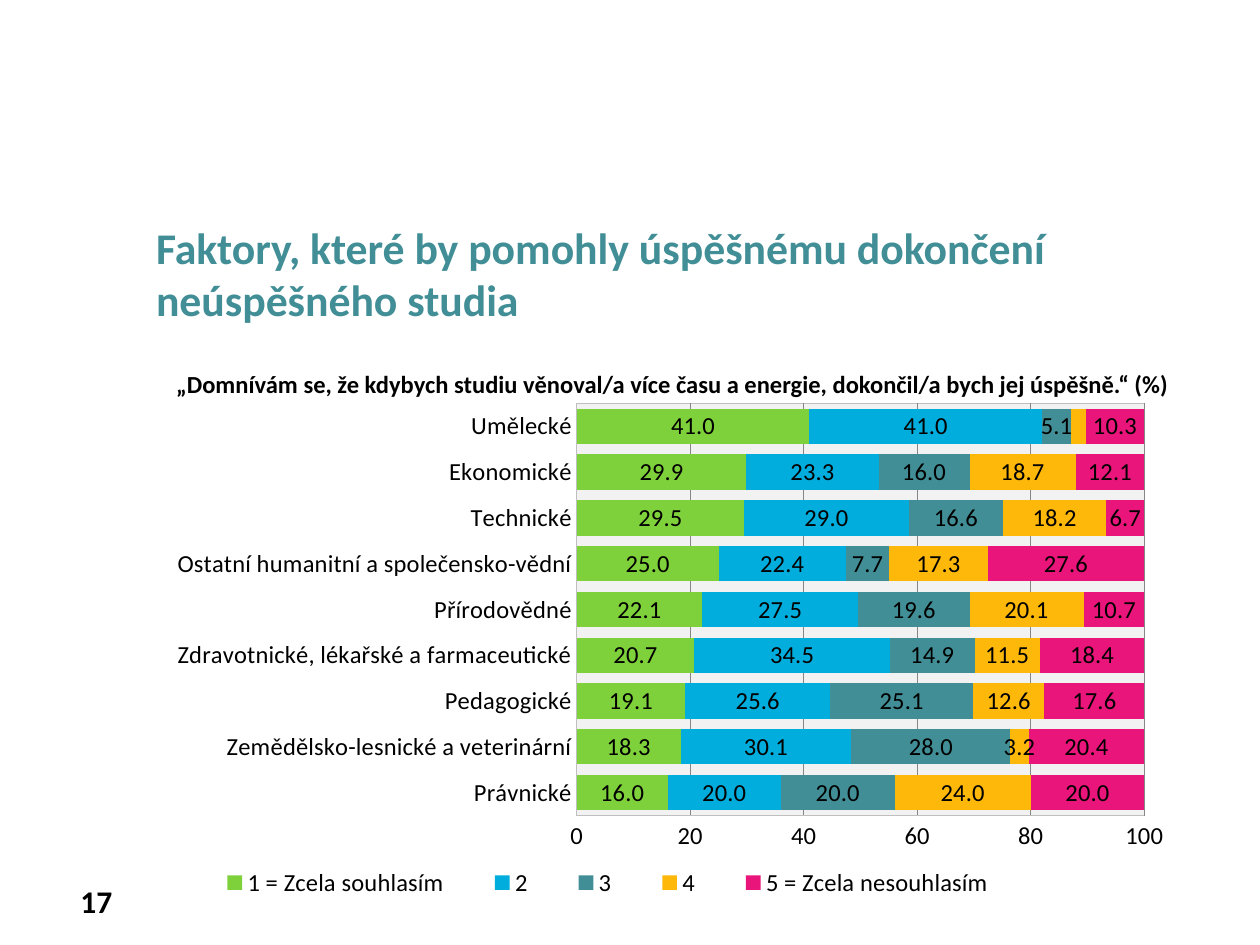
from lxml.etree import SubElement
from pptx import Presentation
from pptx.chart.data import CategoryChartData
from pptx.dml.color import RGBColor
from pptx.enum.chart import XL_CHART_TYPE, XL_LABEL_POSITION, XL_LEGEND_POSITION, XL_TICK_MARK
from pptx.enum.text import PP_ALIGN
from pptx.oxml import parse_xml
from pptx.oxml.ns import nsdecls, qn
from pptx.util import Inches, Pt

WIDTH, HEIGHT = Inches(10), Inches(7.5)
FONT = "Calibri"
BLACK = RGBColor(0x00, 0x00, 0x00)
GREEN = RGBColor(0x7F, 0xD1, 0x3B)
BLUE = RGBColor(0x00, 0xAD, 0xDC)
TEAL = RGBColor(0x41, 0x8E, 0x96)
YELLOW = RGBColor(0xFE, 0xB8, 0x0A)
PINK = RGBColor(0xEA, 0x15, 0x7A)
AXIS_GRAY = RGBColor(0xBF, 0xBF, 0xBF)
GRID_GRAY = RGBColor(0x86, 0x86, 0x86)
PLOT_GRAY = RGBColor(0xF2, 0xF2, 0xF2)

SERIES = [
    ("1 = Zcela souhlasím", GREEN),
    ("2", BLUE),
    ("3", TEAL),
    ("4", YELLOW),
    ("5 = Zcela nesouhlasím", PINK),
]
ANSWERS = {
    "Právnické": (16, 20, 20, 24, 20),
    "Zemědělsko-lesnické a veterinární": (18.3, 30.1, 28, 3.2, 20.4),
    "Pedagogické": (19.1, 25.6, 25.1, 12.6, 17.6),
    "Zdravotnické, lékařské a farmaceutické": (20.7, 34.5, 14.9, 11.5, 18.4),
    "Přírodovědné": (22.1, 27.5, 19.6, 20.1, 10.7),
    "Ostatní humanitní a společensko-vědní": (25, 22.4, 7.7, 17.3, 27.6),
    "Technické": (29.5, 29, 16.6, 18.2, 6.7),
    "Ekonomické": (29.9, 23.3, 16, 18.7, 12.1),
    "Umělecké": (41, 41, 5.1, 2.6, 10.3),
}
SMALLEST_LABEL = 3


def add_text(slide, text, box, size, color=BLACK, bold=True, align=PP_ALIGN.LEFT, wrap=True):
    """Add a text box whose box is given in inches."""
    shape = slide.shapes.add_textbox(*map(Inches, box))
    shape.text_frame.word_wrap = wrap
    paragraph = shape.text_frame.paragraphs[0]
    paragraph.alignment = align
    run = paragraph.add_run()
    run.text = text
    run.font.name, run.font.size, run.font.bold = FONT, Pt(size), bold
    run.font.color.rgb = color


def set_layout(element, position, x, y, width, height, inner=False):
    """Place a chart part by shares of the chart's size."""
    for layout in element.findall(qn("c:layout")):
        element.remove(layout)
    layout = parse_xml(f"<c:layout {nsdecls('c')}/>")
    manual = SubElement(layout, qn("c:manualLayout"))
    settings = [("layoutTarget", "inner")] if inner else []
    settings += [("xMode", "edge"), ("yMode", "edge"), ("x", x), ("y", y), ("w", width), ("h", height)]
    for name, value in settings:
        SubElement(manual, qn(f"c:{name}")).set("val", str(value))
    element.insert(position, layout)


def set_line(line, color):
    """Give a chart line its colour and thin width."""
    line.color.rgb = color
    line.width = Pt(0.75)


def format_axes(chart):
    """Style both axes and the gridlines."""
    for axis in (chart.category_axis, chart.value_axis):
        axis.major_tick_mark = axis.minor_tick_mark = XL_TICK_MARK.NONE
        set_line(axis.format.line, AXIS_GRAY)
    axis = chart.value_axis
    axis.minimum_scale, axis.maximum_scale, axis.major_unit = 0, 100, 20
    axis.has_major_gridlines = True
    set_line(axis.major_gridlines.format.line, GRID_GRAY)
    axis.tick_labels.number_format = "0"
    axis.tick_labels.number_format_is_linked = False


def format_series(series, color):
    """Colour one series and label all but its smallest values."""
    series.format.fill.solid()
    series.format.fill.fore_color.rgb = color
    series.invert_if_negative = False
    labels = series.data_labels
    labels.show_value = True
    labels.position = XL_LABEL_POSITION.CENTER
    labels.number_format, labels.number_format_is_linked = "0.0", False
    small = [index for index, value in enumerate(series.values) if value < SMALLEST_LABEL]
    for position, index in enumerate(small):
        label = parse_xml(
            f'<c:dLbl {nsdecls("c")}><c:idx val="{index}"/><c:delete val="1"/></c:dLbl>'
        )
        series._element.find(qn("c:dLbls")).insert(position, label)


def add_answer_chart(slide, box):
    """Add the stacked bars of answers by field of study."""
    data = CategoryChartData()
    data.categories = list(ANSWERS)
    for (name, _), values in zip(SERIES, zip(*ANSWERS.values())):
        data.add_series(name, values)
    chart = slide.shapes.add_chart(XL_CHART_TYPE.BAR_STACKED, *map(Inches, box), data).chart
    chart.has_title = False
    chart.font.name, chart.font.size = FONT, Pt(14)
    chart.font.color.rgb = BLACK
    plot = chart.plots[0]
    plot.gap_width, plot.overlap, plot.vary_by_categories = 30, 100, False
    for series, (_, color) in zip(plot.series, SERIES):
        format_series(series, color)
    format_axes(chart)
    chart.has_legend = True
    chart.legend.position = XL_LEGEND_POSITION.BOTTOM
    chart.legend.include_in_layout = False
    set_layout(chart.legend._element, 1, 0.03, 0.91, 0.82, 0.08)
    plot_area = chart._chartSpace.chart.plotArea
    set_layout(plot_area, 0, 0.41, 0.02, 0.55, 0.8, inner=True)
    plot_area.append(parse_xml(
        f'<c:spPr {nsdecls("c", "a")}><a:solidFill><a:srgbClr val="{PLOT_GRAY}"/></a:solidFill>'
        f'<a:ln w="9525"><a:solidFill><a:srgbClr val="{AXIS_GRAY}"/></a:solidFill></a:ln></c:spPr>'
    ))


def main():
    """Build and save the slide."""
    presentation = Presentation()
    presentation.slide_width, presentation.slide_height = WIDTH, HEIGHT
    slide = presentation.slides.add_slide(presentation.slide_layouts[6])
    add_text(slide, "17", (0.28, 6.95, 0.71, 0.4), 18, align=PP_ALIGN.RIGHT)
    add_text(slide, "Faktory, které by pomohly úspěšnému dokončení neúspěšného studia",
             (1.14, 1.7, 8.78, 0.55), 25, color=TEAL)
    add_answer_chart(slide, (1.22, 3.12, 8.19, 4.09))
    add_text(slide, "„Domnívám se, že kdybych studiu věnoval/a více času a energie, "
             "dokončil/a bych jej úspěšně.“ (%)", (1.3, 2.88, 8.27, 0.34), 14, wrap=False)
    presentation.save("out.pptx")


if __name__ == "__main__":
    main()
